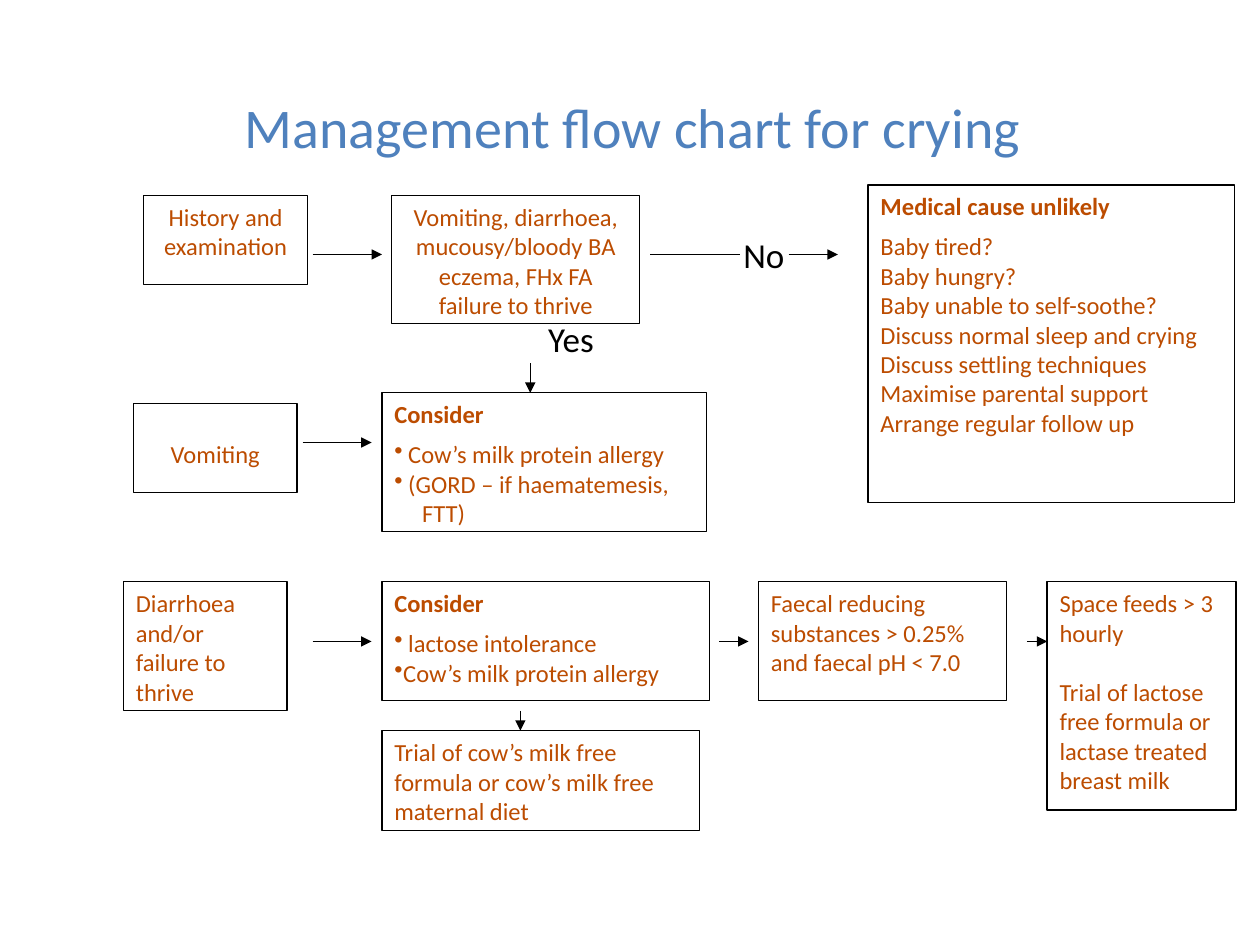
from lxml import etree
from pptx import Presentation
from pptx import util as u
from pptx.dml.color import RGBColor
from pptx.enum import shapes, text
from pptx.oxml.ns import qn

FONT = "Calibri"
BLACK, WHITE, RUST, BLUE = "000000", "FFFFFF", "BC4C00", "4F81BD"
CENTER, LEFT = text.PP_ALIGN.CENTER, text.PP_ALIGN.LEFT
TOP, MIDDLE = text.MSO_ANCHOR.TOP, text.MSO_ANCHOR.MIDDLE

HEADING = {"bold": True, "after": 6}
TOP_ROW, MIDDLE_ROW, BOTTOM_ROW = 3.94, 8.13, 11.73
CONSIDER_LEFT = 7.7


def rgb(value):
    return RGBColor.from_string(value)


def apply(target, values):
    for name, value in values.items():
        setattr(target, name, value)


def indent(paragraph, left, bullet):
    """Set the left margin in cm; a bullet hangs back to the text edge."""
    props = paragraph._p.get_or_add_pPr()
    props.set("marL", str(u.Cm(left)))
    props.set("indent", str(-u.Cm(left) if bullet else 0))
    if bullet:
        etree.SubElement(props, qn("a:buChar")).set("char", "•")


def write(frame, lines, size=14, color=RUST, align=LEFT, anchor=TOP):
    """Fill a frame with lines, each a string or a (string, format) pair."""
    apply(frame, {"word_wrap": True, "vertical_anchor": anchor,
                  "auto_size": text.MSO_AUTO_SIZE.NONE})
    for number, line in enumerate(lines):
        words, style = (line, {}) if isinstance(line, str) else line
        paragraph = frame.add_paragraph() if number else frame.paragraphs[0]
        if "indent" in style:
            indent(paragraph, style["indent"], style.get("bullet", False))
        apply(paragraph, {"alignment": align,
                          "space_before": u.Pt(style.get("before", 0)),
                          "space_after": u.Pt(style.get("after", 0))})
        run = paragraph.add_run()
        run.text = words
        apply(run.font, {"name": FONT, "size": u.Pt(size),
                         "bold": style.get("bold", False)})
        run.font.color.rgb = rgb(color)


def add_title(slide, words):
    title = slide.shapes.title
    apply(title, {"left": u.Cm(2.69), "top": u.Cm(1.73),
                  "width": u.Cm(20.14), "height": u.Cm(2.21)})
    write(title.text_frame, [words], 32, BLUE, CENTER)


def add_step(slide, place, lines, align=LEFT, margin_top=0.13):
    step = slide.shapes.add_shape(shapes.MSO_SHAPE.RECTANGLE, *map(u.Cm, place))
    step.shadow.inherit = False
    step.fill.solid()
    step.fill.fore_color.rgb = rgb(WHITE)
    step.line.color.rgb = rgb(BLACK)
    step.line.width = u.Pt(0.75)
    step.text_frame.margin_top = u.Cm(margin_top)
    write(step.text_frame, lines, align=align)


def add_answer(slide, center_x, center_y, word):
    width, height = 2, 1
    answer = slide.shapes.add_textbox(u.Cm(center_x - width / 2),
                                      u.Cm(center_y - height / 2),
                                      u.Cm(width), u.Cm(height))
    write(answer.text_frame, [word], 20, BLACK, CENTER, MIDDLE)


def add_flow(slide, start, end, arrow=True):
    flow = slide.shapes.add_connector(shapes.MSO_CONNECTOR.STRAIGHT,
                                      *map(u.Cm, start + end))
    flow.line.color.rgb = rgb(BLACK)
    flow.line.width = u.Pt(0.75)
    props = flow._element.spPr
    if arrow:
        etree.SubElement(props.find(qn("a:ln")), qn("a:tailEnd")).set("type", "triangle")
    etree.SubElement(props, qn("a:effectLst"))


def add_steps(slide):
    add_step(slide, (2.9, TOP_ROW, 3.3, 1.8), ["History and examination"], CENTER)
    add_step(slide, (7.9, TOP_ROW, 5, 2.59),
             ["Vomiting, diarrhoea,", "mucousy/bloody BA eczema, FHx FA",
              "failure to thrive"], CENTER)
    add_step(slide, (17.5, 3.73, 7.39, 6.4),
             [("Medical cause unlikely", HEADING), "Baby tired?", "Baby hungry?",
              "Baby unable to self-soothe?", "Discuss normal sleep and crying",
              "Discuss settling techniques", "Maximise parental support",
              "Arrange regular follow up"])
    add_step(slide, (2.69, MIDDLE_ROW, 3.3, 1.8), ["Vomiting"], CENTER, 0.73)
    add_step(slide, (2.49, BOTTOM_ROW, 3.3, 2.59),
             ["Diarrhoea", "and/or", "failure to thrive"])

    bullet = {"indent": 0.28, "bullet": True}
    add_step(slide, (CONSIDER_LEFT, 7.92, 6.55, 2.79),
             [("Consider", HEADING), ("Cow’s milk protein allergy", bullet),
              ("(GORD – if haematemesis,", bullet), ("FTT)", {"indent": 0.56})])
    add_step(slide, (CONSIDER_LEFT, BOTTOM_ROW, 6.6, 2.39),
             [("Consider", HEADING), ("lactose intolerance", bullet),
              ("Cow’s milk protein allergy", {"indent": 0.18, "bullet": True})])
    add_step(slide, (15.29, BOTTOM_ROW, 5, 2.39),
             ["Faecal reducing substances > 0.25% and faecal pH < 7.0"])
    add_step(slide, (CONSIDER_LEFT, 14.73, 6.4, 2.01),
             ["Trial of cow’s milk free formula or cow’s milk free maternal diet"])
    add_step(slide, (21.11, BOTTOM_ROW, 3.81, 4.6),
             ["Space feeds > 3 hourly",
              ("Trial of lactose free formula or lactase treated breast milk",
               {"before": 17})])


def add_flows(slide):
    top, middle, bottom = 5.13, 8.92, 12.93
    add_flow(slide, (13.11, top), (14.91, top), arrow=False)
    for y, start, end in ((top, 6.3, 7.7), (top, 15.9, 16.89), (middle, 6.1, 7.49),
                          (bottom, 6.3, 7.49), (bottom, 14.5, 15.09),
                          (bottom, 20.7, 21.11)):
        add_flow(slide, (start, y), (end, y))
    for x, start, end in ((10.69, 7.32, 7.92), (10.49, 14.33, 14.73)):
        add_flow(slide, (x, start), (x, end))
    add_answer(slide, 15.4, top, "No")
    add_answer(slide, 11.51, 6.83, "Yes")


def main():
    deck = Presentation()
    apply(deck, {"slide_width": u.Cm(25.4), "slide_height": u.Cm(19.05)})
    slide = deck.slides.add_slide(deck.slide_layouts.get_by_name("Title Only"))
    add_title(slide, "Management flow chart for crying")
    add_steps(slide)
    add_flows(slide)
    deck.save("out.pptx")


if __name__ == "__main__":
    main()
